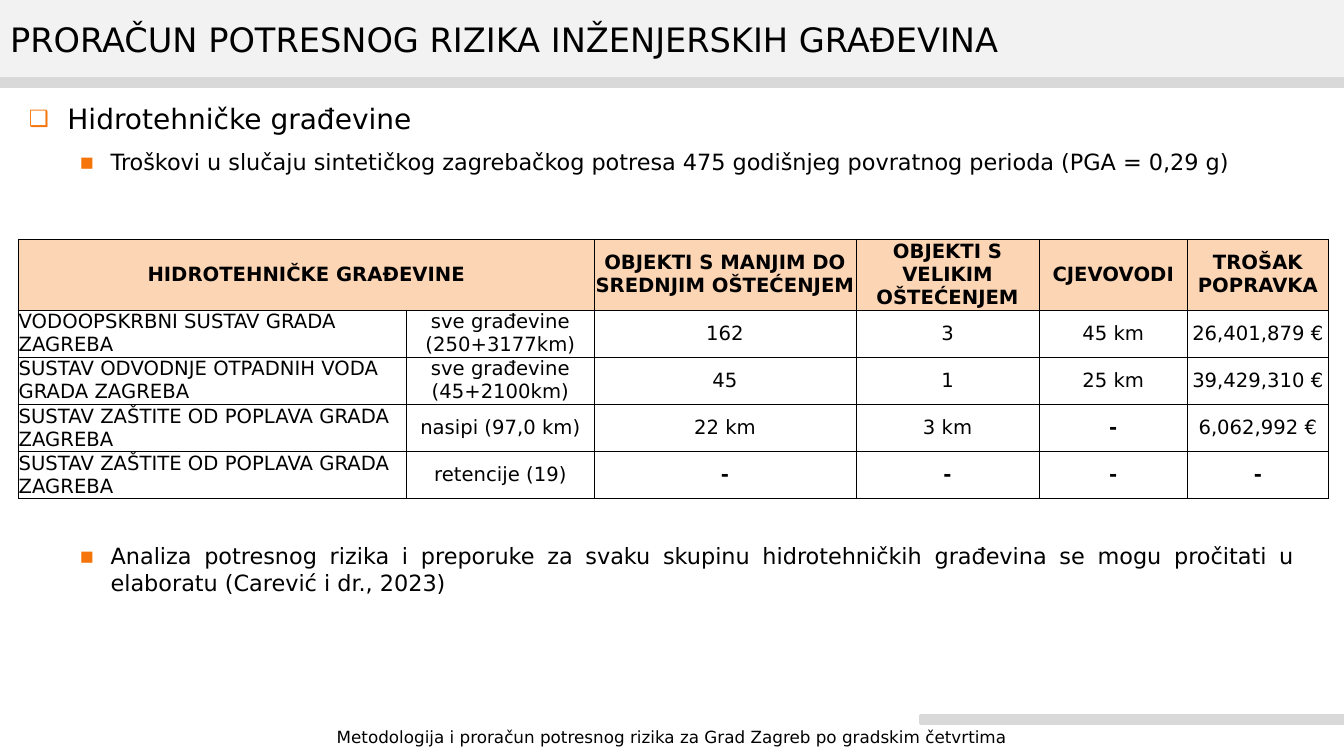
import pptx
import pptx.dml.color
import pptx.enum.shapes
import pptx.enum.text
import pptx.oxml
import pptx.oxml.ns
import pptx.util
from lxml import etree

Cm = pptx.util.Cm
Pt = pptx.util.Pt
ALIGN = pptx.enum.text.PP_ALIGN
ANCHOR = pptx.enum.text.MSO_ANCHOR
FONT = "DejaVu Sans"
ORANGE = "F5750B"
GREY = "D9D9D9"

COLUMNS = [9.78, 4.72, 6.6, 4.62, 3.73, 3.56]
HEADER = ["HIDROTEHNIČKE GRAĐEVINE", "", "OBJEKTI S MANJIM DO SREDNJIM OŠTEĆENJEM",
          "OBJEKTI S VELIKIM OŠTEĆENJEM", "CJEVOVODI", "TROŠAK POPRAVKA"]
ROWS = [
    ["VODOOPSKRBNI SUSTAV GRADA ZAGREBA", "sve građevine (250+3177km)",
     "162", "3", "45 km", "26,401,879 €"],
    ["SUSTAV ODVODNJE OTPADNIH VODA GRADA ZAGREBA", "sve građevine (45+2100km)",
     "45", "1", "25 km", "39,429,310 €"],
    ["SUSTAV ZAŠTITE OD POPLAVA GRADA ZAGREBA", "nasipi (97,0 km)",
     "22 km", "3 km", "-", "6,062,992 €"],
    ["SUSTAV ZAŠTITE OD POPLAVA GRADA ZAGREBA", "retencije (19)",
     "-", "-", "-", "-"],
]


def rgb(color):
    return pptx.dml.color.RGBColor.from_string(color)


def sub(parent, tag, **attrs):
    return etree.SubElement(parent, pptx.oxml.ns.qn(tag), attrs)


def write(p, text, size=16, bold=False, color="000000", align=ALIGN.LEFT, before=0):
    p.alignment = align
    p.space_before = Pt(before)
    r = p.add_run()
    r.text = text
    r.font.name = FONT
    r.font.size = Pt(size)
    r.font.bold = bold
    r.font.color.rgb = rgb(color)


def bullet(p, char, margin, hanging, percent=100):
    pPr = p._p.get_or_add_pPr()
    pPr.set("marL", str(Cm(margin)))
    pPr.set("indent", str(-Cm(hanging)))
    sub(sub(pPr, "a:buClr"), "a:srgbClr", val=ORANGE)
    sub(pPr, "a:buSzPct", val=str(percent * 1000))
    sub(pPr, "a:buFont", typeface=FONT)
    sub(pPr, "a:buChar", char=char)


def sub_point(p, text, before=0):
    bullet(p, "▪", 2.06, 0.79)
    write(p, text, align=ALIGN.JUSTIFY, before=before)


def add_bar(slide, left, top, width, height, fill, outlined=True):
    sp = slide.shapes.add_shape(pptx.enum.shapes.MSO_SHAPE.RECTANGLE,
                                Cm(left), Cm(top), Cm(width), Cm(height))
    sp.shadow.inherit = False
    sp.fill.solid()
    sp.fill.fore_color.rgb = rgb(fill)
    if outlined:
        sp.line.color.rgb = rgb(fill)
        sp.line.width = Pt(2)
    else:
        sp.line.fill.background()


def add_text_box(slide, left, top, width, height):
    tf = slide.shapes.add_textbox(Cm(left), Cm(top), Cm(width), Cm(height)).text_frame
    tf.word_wrap = True
    return tf


def place_title(slide, text):
    sp = slide.shapes.title
    sp.left, sp.top, sp.width, sp.height = Cm(0), Cm(0), Cm(33.87), Cm(1.96)
    tf = sp.text_frame
    tf.auto_size = pptx.enum.text.MSO_AUTO_SIZE.NONE
    tf.vertical_anchor = ANCHOR.MIDDLE
    write(tf.paragraphs[0], text, size=24)
    slide.shapes._spTree.append(sp._element)


def format_cell(cell, text, header, align):
    cell.margin_left = cell.margin_right = cell.margin_top = cell.margin_bottom = 0
    cell.vertical_anchor = ANCHOR.MIDDLE
    if header:
        cell.fill.solid()
        cell.fill.fore_color.rgb = rgb("FCD5B5")
    else:
        cell.fill.background()
    tcPr = cell._tc.get_or_add_tcPr()
    for i, side in enumerate(("a:lnL", "a:lnR", "a:lnT", "a:lnB")):
        ln = sub(tcPr, side, w=str(Pt(0.5)))
        sub(sub(ln, "a:solidFill"), "a:srgbClr", val="000000")
        tcPr.insert(i, ln)
    if text:
        write(cell.text_frame.paragraphs[0], text, size=14,
              bold=header or text == "-", align=align)


def add_cost_table(slide):
    rows = [HEADER] + ROWS
    heights = [1.77] + [1.16] * len(ROWS)
    table = slide.shapes.add_table(len(rows), len(COLUMNS), Cm(0.47), Cm(6.03),
                                   Cm(sum(COLUMNS)), Cm(sum(heights))).table
    table.first_row = table.horz_banding = False
    for column, width in zip(table.columns, COLUMNS):
        column.width = Cm(width)
    for i, row in enumerate(rows):
        table.rows[i].height = Cm(heights[i])
        for j, text in enumerate(row):
            align = ALIGN.LEFT if i and j == 0 else ALIGN.CENTER
            format_cell(table.cell(i, j), text, i == 0, align)
    table.cell(0, 0).merge(table.cell(0, 1))


def main():
    prs = pptx.Presentation()
    prs.slide_width, prs.slide_height = Cm(33.87), Cm(19.05)
    slide = prs.slides.add_slide(prs.slide_layouts[5])

    add_bar(slide, 0, 0, 33.87, 2, "F2F2F2", outlined=False)
    add_bar(slide, 0, 1.98, 33.87, 0.2, GREY)
    add_bar(slide, 23.19, 18.03, 10.68, 0.2, GREY)
    place_title(slide, "PRORAČUN POTRESNOG RIZIKA INŽENJERSKIH GRAĐEVINA")

    tf = add_text_box(slide, 0, 18.19, 33.87, 0.86)
    write(tf.paragraphs[0],
          "Metodologija i proračun potresnog rizika za Grad Zagreb po gradskim četvrtima",
          size=12, align=ALIGN.CENTER)

    tf = add_text_box(slide, 0.48, 2.44, 32.41, 2.4)
    p = tf.paragraphs[0]
    bullet(p, "❑", 0.97, 0.97, percent=80)
    write(p, "Hidrotehničke građevine", size=20, align=ALIGN.JUSTIFY)
    sub_point(tf.add_paragraph(),
              "Troškovi u slučaju sintetičkog zagrebačkog potresa 475 godišnjeg "
              "povratnog perioda (PGA = 0,29 g)", before=9)

    add_cost_table(slide)

    tf = add_text_box(slide, 0.48, 13.54, 32.41, 1.7)
    sub_point(tf.paragraphs[0],
              "Analiza potresnog rizika i preporuke za svaku skupinu hidrotehničkih "
              "građevina se mogu pročitati u elaboratu (Carević i dr., 2023)")

    prs.save("out.pptx")


if __name__ == "__main__":
    main()
